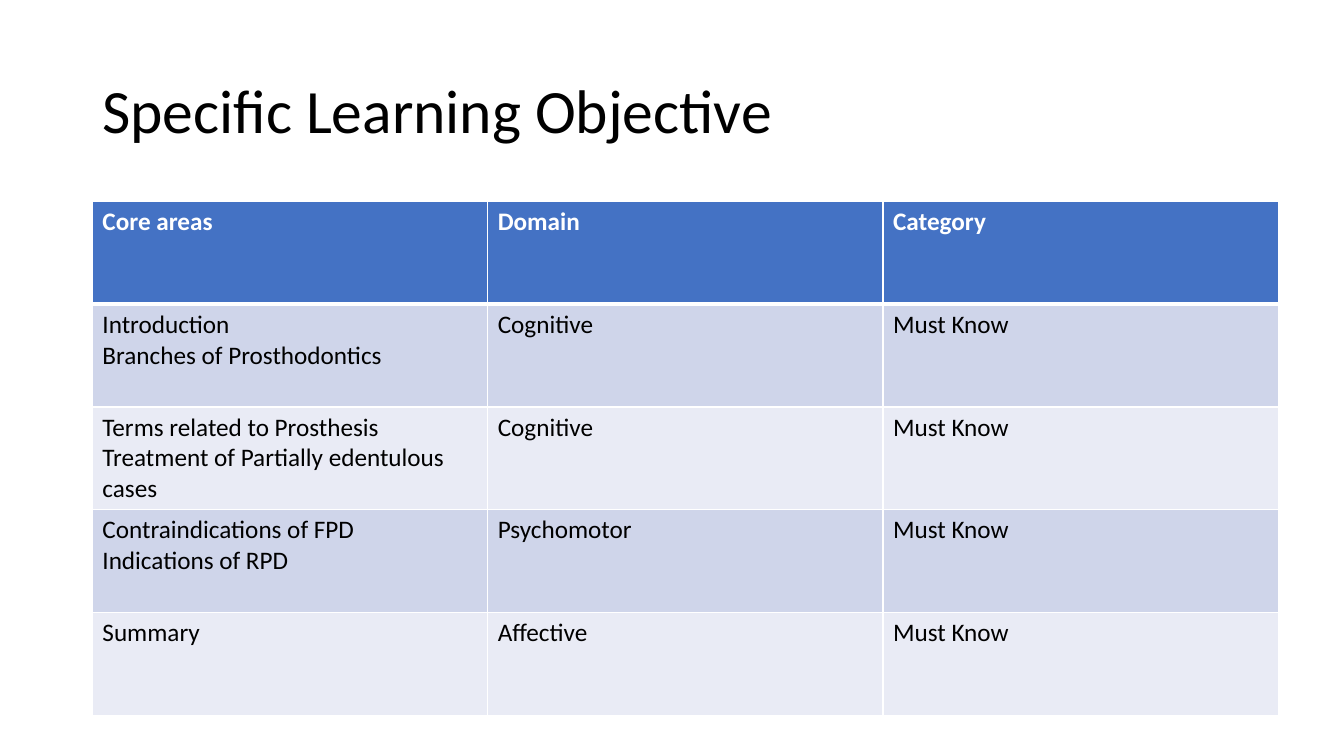
from dataclasses import dataclass

from lxml.etree import SubElement
from pptx import Presentation
from pptx.dml.color import RGBColor
from pptx.enum.text import MSO_ANCHOR
from pptx.oxml.ns import qn
from pptx.util import Pt


@dataclass(frozen=True)
class Theme:
    font: str = "Calibri"
    title_size: int = 44
    table_size: int = 18
    ink: str = "000000"
    paper: str = "FFFFFF"
    header: str = "4472C4"
    bands: tuple = ("CFD5EA", "E9EBF5")
    rule: int = 1
    header_rule: int = 3


class SlideBuilder:
    def __init__(self, slide, theme):
        self.slide = slide
        self.theme = theme

    def style(self, paragraph, size, color, bold=False):
        paragraph.font.name = self.theme.font
        paragraph.font.size = Pt(size)
        paragraph.font.bold = bold
        paragraph.font.color.rgb = RGBColor.from_string(color)

    def title(self, text, left, top, width, height):
        box = self.slide.shapes.add_textbox(Pt(left), Pt(top), Pt(width), Pt(height))
        frame = box.text_frame
        frame.word_wrap = True
        frame.vertical_anchor = MSO_ANCHOR.MIDDLE
        frame.text = text
        heading = frame.paragraphs[0]
        heading.line_spacing = 0.9
        self.style(heading, self.theme.title_size, self.theme.ink)

    def borders(self, cell, top, bottom):
        properties = cell._tc.get_or_add_tcPr()
        rule = self.theme.rule
        for side, width in (("L", rule), ("R", rule), ("T", top), ("B", bottom)):
            line = SubElement(properties, qn(f"a:ln{side}"), w=str(Pt(width)))
            fill = SubElement(line, qn("a:solidFill"))
            SubElement(fill, qn("a:srgbClr"), val=self.theme.paper)

    def cell(self, cell, text, row):
        theme = self.theme
        is_header = row == 0
        self.borders(
            cell,
            top=theme.header_rule if row == 1 else theme.rule,
            bottom=theme.header_rule if is_header else theme.rule,
        )
        background = theme.header if is_header else theme.bands[(row - 1) % 2]
        cell.fill.solid()
        cell.fill.fore_color.rgb = RGBColor.from_string(background)
        cell.text = text
        for paragraph in cell.text_frame.paragraphs:
            self.style(paragraph, theme.table_size,
                       theme.paper if is_header else theme.ink, is_header)

    def table(self, rows, left, top, column_width, row_height):
        columns = len(rows[0])
        table = self.slide.shapes.add_table(
            len(rows), columns, Pt(left), Pt(top),
            Pt(column_width * columns), Pt(row_height * len(rows)),
        ).table
        for column in table.columns:
            column.width = Pt(column_width)
        for row, texts in enumerate(rows):
            table.rows[row].height = Pt(row_height)
            for column, text in enumerate(texts):
                self.cell(table.cell(row, column), text, row)


OBJECTIVES = [
    ("Core areas", "Domain", "Category"),
    ("Introduction\nBranches of Prosthodontics", "Cognitive", "Must Know"),
    ("Terms related to Prosthesis\nTreatment of Partially edentulous cases",
     "Cognitive", "Must Know"),
    ("Contraindications of FPD\nIndications of RPD", "Psychomotor", "Must Know"),
    ("Summary", "Affective", "Must Know"),
]


def main():
    presentation = Presentation()
    presentation.slide_width = Pt(960)
    presentation.slide_height = Pt(540)
    slide = presentation.slides.add_slide(presentation.slide_layouts[6])
    builder = SlideBuilder(slide, Theme())
    builder.title("Specific Learning Objective", 66, 28.75, 828, 104.4)
    builder.table(OBJECTIVES, left=66, top=144, column_width=282.4, row_height=73.4)
    presentation.save("out.pptx")


if __name__ == "__main__":
    main()
